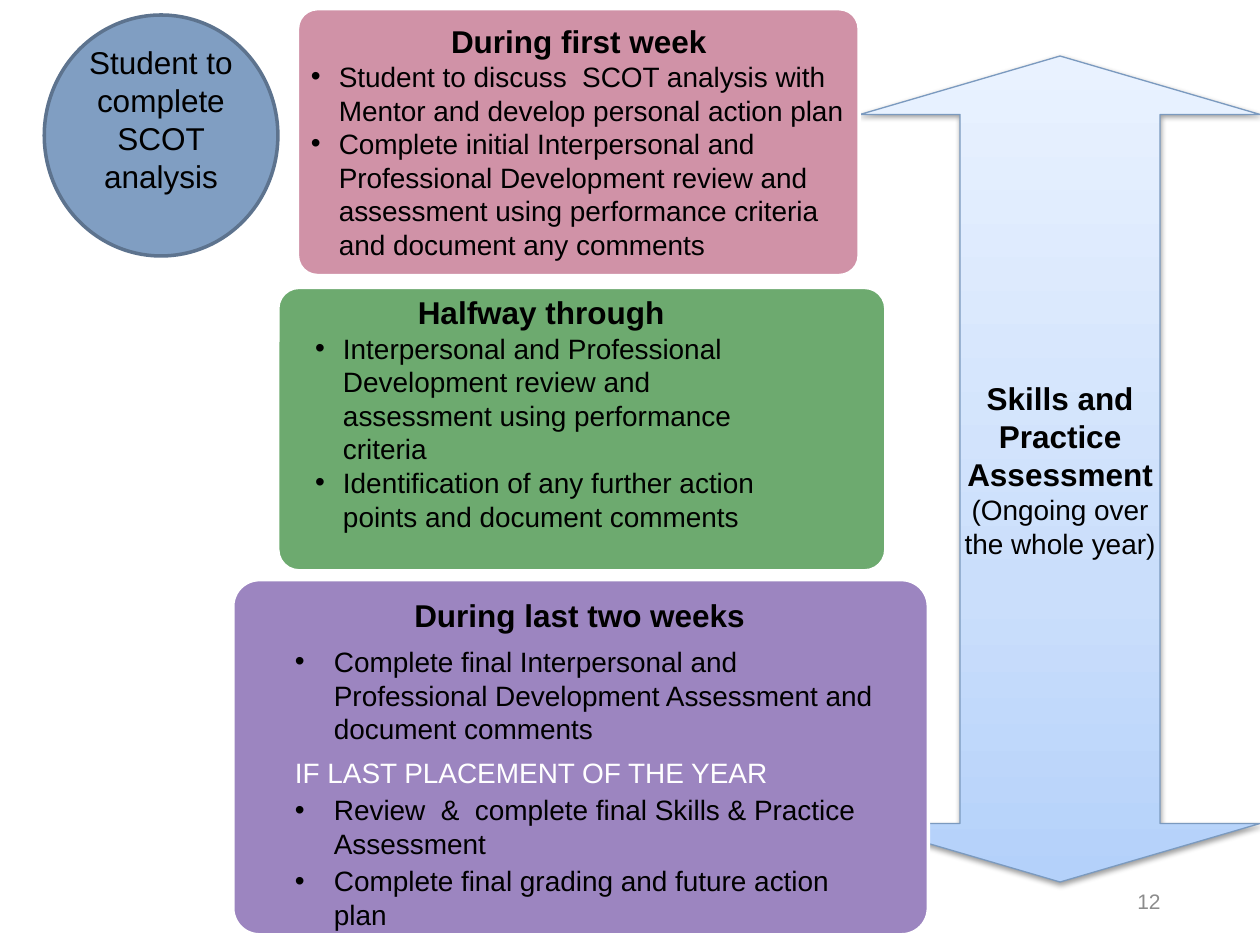
from copy import deepcopy

from lxml import etree
from pptx import Presentation
from pptx import util as u
from pptx.dml.color import RGBColor
from pptx.enum import shapes, text
from pptx.oxml import ns

BLACK, WHITE = "000000", "FFFFFF"
LEFT, CENTER, RIGHT = text.PP_ALIGN.LEFT, text.PP_ALIGN.CENTER, text.PP_ALIGN.RIGHT
TOP, MIDDLE = text.MSO_ANCHOR.TOP, text.MSO_ANCHOR.MIDDLE


def rgb(value):
    return RGBColor.from_string(value)


def add_xml(parent, tag, **attributes):
    return etree.SubElement(parent, ns.qn(tag), attributes)


class SlideBuilder:
    font = "Arial"
    heading_size = 18
    body_size = 16

    def __init__(self, slide):
        self.slide = slide
        self.free_bodies = [p for p in slide.placeholders
                            if p != slide.shapes.title]

    def paint(self, item, fill, line, line_width):
        item.shadow.inherit = False
        item.fill.solid()
        item.fill.fore_color.rgb = rgb(fill)
        item.line.color.rgb = rgb(line)
        item.line.width = u.Pt(line_width)

    def shape(self, preset, box, fill, line, line_width, corner=None):
        item = self.slide.shapes.add_shape(preset, *map(u.Pt, box))
        self.paint(item, fill, line, line_width)
        if corner is not None:
            item.adjustments[0] = corner

    def double_arrow(self, box, head, stops, line):
        left, top, width, height = box
        right, bottom, middle = left + width, top + height, left + width / 2
        shaft_left, shaft_right = left + width / 4, right - width / 4
        upper, lower = top + head, bottom - head
        corners = [(left, upper), (middle, top), (right, upper),
                   (shaft_right, upper), (shaft_right, lower), (right, lower),
                   (middle, bottom), (left, lower), (shaft_left, lower),
                   (shaft_left, upper)]
        start, *rest = [(u.Pt(x), u.Pt(y)) for x, y in corners]
        outline = self.slide.shapes.build_freeform(*start)
        outline.add_line_segments(rest, close=True)
        item = outline.convert_to_shape()
        self.paint(item, WHITE, line, 0.75)
        # Gradient running upwards, with a third stop added
        item.fill.gradient()
        item.fill.gradient_angle = 90
        first = item._element.spPr.find(".//" + ns.qn("a:gs"))
        first.addnext(deepcopy(first))
        for stop, (position, color) in zip(item.fill.gradient_stops, stops):
            stop.position = position
            stop.color.rgb = rgb(color)
        # Soft shadow below
        effects = item._element.spPr.find(ns.qn("a:effectLst"))
        shadow = add_xml(effects, "a:outerShdw", blurRad=str(u.Pt(3)),
                         dist=str(u.Pt(1.6)), dir="5400000", rotWithShape="0")
        add_xml(add_xml(shadow, "a:srgbClr", val=BLACK), "a:alpha", val="38000")

    def frame(self, item, inset, anchor):
        frame = item.text_frame
        frame.word_wrap = True
        frame.auto_size = text.MSO_AUTO_SIZE.NONE
        frame.vertical_anchor = anchor
        frame.margin_left = frame.margin_right = u.Pt(inset)
        frame.margin_top = frame.margin_bottom = u.Pt(inset)
        return frame

    def paragraph(self, frame, words, size, bold=False, color=BLACK,
                  align=LEFT, before=0, indent=0):
        first = frame.paragraphs[0]
        para = frame.add_paragraph() if first.runs else first
        para.alignment = align
        para.space_before = u.Pt(before)
        props = para._p.get_or_add_pPr()
        props.set("marL", str(u.Pt(indent)))
        props.set("indent", str(-u.Pt(indent)))
        if indent:
            add_xml(props, "a:buFont", typeface=self.font)
            add_xml(props, "a:buChar", char="•")
        else:
            add_xml(props, "a:buNone")
        run = para.add_run()
        run.text = words
        run.font.name = self.font
        run.font.size = u.Pt(size)
        run.font.bold = bold
        run.font.color.rgb = rgb(color)

    def label(self, box, lines, align=CENTER, color=BLACK, inset=0):
        item = self.slide.shapes.add_textbox(*map(u.Pt, box))
        frame = self.frame(item, inset, MIDDLE)
        for words, size, bold in lines:
            self.paragraph(frame, words, size, bold, color, align)

    def stage(self, panel, fill, body, heading, items, indent=16,
              inset=3.6, anchor=TOP, before=0):
        self.shape(shapes.MSO_SHAPE.ROUNDED_RECTANGLE, panel, fill, WHITE, 2, 0.075)
        holder = self.free_bodies.pop(0)
        holder.left, holder.top, holder.width, holder.height = map(u.Pt, body)
        self.slide.shapes._spTree.append(holder._element)  # in front of its panel
        frame = self.frame(holder, inset, anchor)
        self.paragraph(frame, heading, self.heading_size, True,
                       align=CENTER, before=before)
        for words, gap, color, bulleted in items:
            self.paragraph(frame, words, self.body_size, color=color, before=gap,
                           indent=indent if bulleted else 0)

    def remove_empty_placeholders(self):
        for holder in list(self.slide.placeholders):
            if not holder.text_frame.text:
                holder._element.getparent().remove(holder._element)


def bullet(words, gap=0):
    return words, gap, BLACK, True


def main():
    deck = Presentation()
    deck.slide_width, deck.slide_height = u.Pt(720), u.Pt(540)
    comparison = deck.slide_layouts[4]
    page = SlideBuilder(deck.slides.add_slide(comparison))

    # Year-long assessment arrow
    page.double_arrow((491.5, 32, 228.5, 472), 33.4,
                      [(0, "B4D1FA"), (0.35, "CADEFB"), (1, "E9F2FF")], "7B9ABF")
    page.label((548.5, 216, 114.5, 104.5),
               [("Skills and Practice Assessment", 18, True),
                ("(Ongoing over the whole year)", 16, False)])

    # Placement stages
    page.stage((170, 5, 321, 152.5), "D092A7", (174, 8.8, 313.5, 342),
               "During first week", [
                   bullet("Student to discuss  SCOT analysis with Mentor and "
                          "develop personal action plan"),
                   bullet("Complete initial Interpersonal and Professional "
                          "Development review and assessment using performance "
                          "criteria and document any comments")])
    page.stage((158.7, 164.2, 347.5, 162), "6DAA6F", (176.4, 164, 265.7, 185),
               "Halfway through", [
                   bullet("Interpersonal and Professional Development review and "
                          "assessment using performance criteria"),
                   bullet("Identification of any further action points and "
                          "document comments")])
    page.stage((133, 331.2, 397.5, 203), "9C85C0", (168.5, 366.5, 330.5, 139.7),
               "During last two weeks ", [
                   bullet("Complete final Interpersonal and Professional "
                          "Development Assessment and document comments", 6),
                   ("IF LAST PLACEMENT OF THE YEAR", 6, WHITE, False),
                   bullet("Review  &  complete final Skills & Practice Assessment", 2),
                   bullet("Complete final grading and future action plan", 2)],
               indent=22.3, inset=0, anchor=MIDDLE, before=7)

    # Starting point
    page.shape(shapes.MSO_SHAPE.OVAL, (25.3, 8.6, 133.5, 137.7),
               "809EC2", "5D738E", 2)
    page.label((44.8, 24.5, 94.4, 87),
               [("Student to complete SCOT analysis", 18, False)])

    # Page number
    page.label((508.3, 500.4, 162, 28.8), [("12", 12, False)],
               RIGHT, "8C8C8C", 7.2)

    page.remove_empty_placeholders()
    deck.save("out.pptx")


if __name__ == "__main__":
    main()
